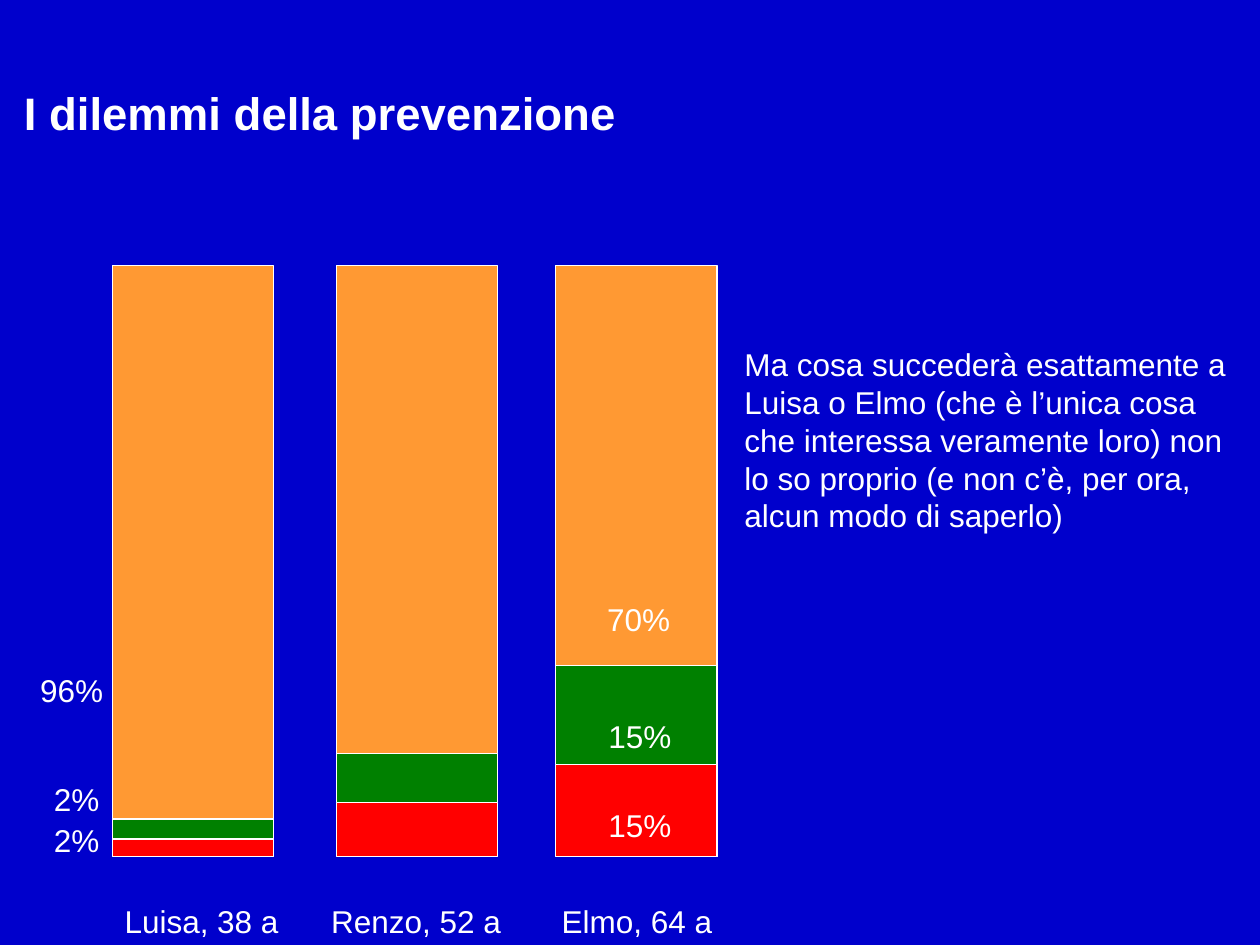
import pptx
import pptx.util
import pptx.dml.color
import pptx.enum.shapes
import pptx.enum.text

Inches = pptx.util.Inches
WHITE, BLUE = "FFFFFF", "0000CC"
ORANGE, RED, GREEN = "FF9933", "FF0000", "008000"
BAR_WIDTH, BAR_TOP, BAR_BOTTOM = 1.28, 2.11, 6.8
NAME_WIDTH = 1.7

PEOPLE = [
    ("Luisa, 38 a", 0.89, 0.89, 6.5, 0.16),
    ("Renzo, 52 a", 2.67, 2.53, 5.98, 0.39),
    ("Elmo, 64 a", 4.41, 4.36, 5.28, 0.79),
]
PERCENTAGES = [
    ("96%", 0.22, 5.28, 0.71),
    ("2%", 0.33, 6.14, 0.57),
    ("2%", 0.33, 6.47, 0.57),
    ("70%", 4.72, 4.71, 0.71),
    ("15%", 4.73, 5.64, 0.71),
    ("15%", 4.73, 6.35, 0.71),
]
COMMENT = (
    "Ma cosa succederà esattamente a Luisa o Elmo (che è l’unica cosa che "
    "interessa veramente loro) non lo so proprio (e non c’è, per ora, "
    "alcun modo di saperlo)"
)


def set_color(color_format, value):
    color_format.rgb = pptx.dml.color.RGBColor.from_string(value)


def add_text(s, text, left, top, width, height, size=18, bold=False, wrap=False):
    sp = s.shapes.add_textbox(Inches(left), Inches(top), Inches(width), Inches(height))
    tf = sp.text_frame
    tf.word_wrap = wrap
    p = tf.paragraphs[0]
    p.text = text
    p.font.name = "Arial"
    p.font.size = pptx.util.Pt(size)
    p.font.bold = bold
    set_color(p.font.color, WHITE)
    return tf


def add_title(s, text):
    tf = add_text(s, text, 0.19, 0.24, 9.62, 0.92, size=26, bold=True, wrap=True)
    tf.vertical_anchor = pptx.enum.text.MSO_ANCHOR.BOTTOM
    tf.margin_left = tf.margin_right = 0
    tf.paragraphs[0].line_spacing = 0.9


def add_segment(s, left, top, height, color):
    sp = s.shapes.add_shape(
        pptx.enum.shapes.MSO_SHAPE.RECTANGLE,
        Inches(left), Inches(top), Inches(BAR_WIDTH), Inches(height),
    )
    sp.shadow.inherit = False
    sp.fill.solid()
    set_color(sp.fill.fore_color, color)
    set_color(sp.line.color, WHITE)
    sp.line.width = pptx.util.Pt(0.75)


def add_person(s, name, left, name_left, risk_top, green_height):
    add_segment(s, left, BAR_TOP, BAR_BOTTOM - BAR_TOP, ORANGE)
    add_segment(s, left, risk_top, BAR_BOTTOM - risk_top, RED)
    add_segment(s, left, risk_top, green_height, GREEN)
    add_text(s, name, name_left, 7.11, NAME_WIDTH, 0.39, wrap=True)


def main():
    prs = pptx.Presentation()
    prs.slide_width, prs.slide_height = Inches(10), Inches(7.5)
    s = prs.slides.add_slide(prs.slide_layouts[6])
    s.background.fill.solid()
    set_color(s.background.fill.fore_color, BLUE)
    add_title(s, "I dilemmi della prevenzione")
    for person in PEOPLE:
        add_person(s, *person)
    add_text(s, COMMENT, 5.81, 2.69, 4.12, 1.92, wrap=True)
    for text, left, top, width in PERCENTAGES:
        add_text(s, text, left, top, width, 0.4)
    prs.save("out.pptx")


if __name__ == "__main__":
    main()
